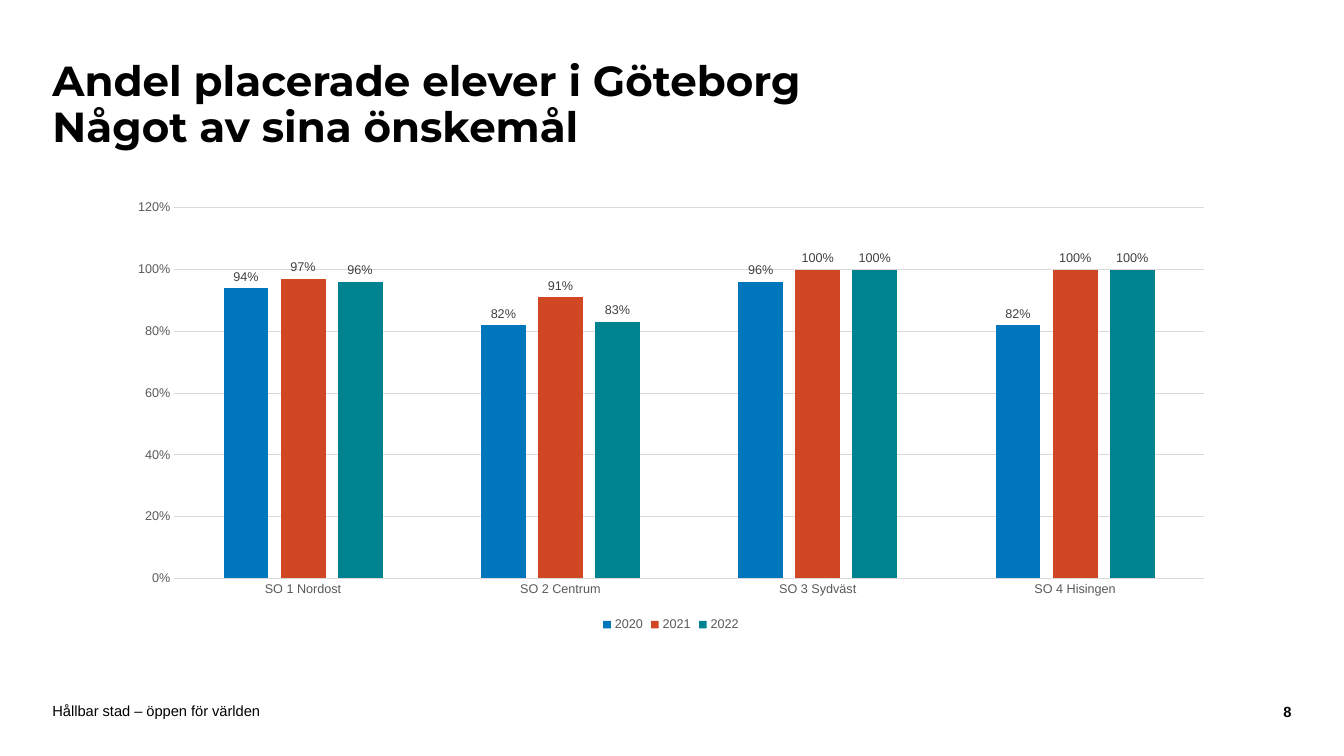
from pptx import Presentation
from pptx.chart.data import CategoryChartData
from pptx.dml.color import RGBColor
from pptx.enum.chart import XL_CHART_TYPE, XL_LABEL_POSITION, XL_LEGEND_POSITION, XL_TICK_MARK
from pptx.enum.text import MSO_ANCHOR, PP_ALIGN
from pptx.util import Inches, Pt

COLORS = {
    "text": "000000",
    "axis": "595959",
    "label": "404040",
    "grid": "D9D9D9",
    "2020": "0077BC",
    "2021": "D24723",
    "2022": "008391",
}


def set_font(font, size, color, name="Arial", bold=False):
    font.name = name
    font.size = Pt(size)
    font.bold = bold
    font.color.rgb = RGBColor.from_string(COLORS[color])


def add_text(text, left, top, width, height, size, name="Arial", bold=False,
             align=PP_ALIGN.LEFT, inset=0, spacing=1.0):
    sp = slide.shapes.add_textbox(Inches(left), Inches(top), Inches(width), Inches(height))
    tf = sp.text_frame
    tf.word_wrap = True
    tf.vertical_anchor = MSO_ANCHOR.MIDDLE
    tf.margin_left = tf.margin_right = 0
    tf.margin_top = tf.margin_bottom = Inches(inset)
    p = tf.paragraphs[0]
    p.text = text
    p.alignment = align
    p.line_spacing = spacing
    for r in p.runs:
        set_font(r.font, size, "text", name, bold)


prs = Presentation()
prs.slide_width, prs.slide_height = Inches(13.33), Inches(7.5)
slide = prs.slides.add_slide(prs.slide_layouts[6])

# Title and footer
add_text("Andel placerade elever i Göteborg\vNågot av sina önskemål", 0.52, 0.42, 10.03, 1.26,
         30, name="Montserrat", bold=True, inset=0.05, spacing=0.9)
add_text("Hållbar stad – öppen för världen", 0.52, 6.97, 9.45, 0.16, 10.5)
add_text("8", 12.17, 6.98, 0.64, 0.16, 10.5, bold=True, align=PP_ALIGN.RIGHT)

# Chart data
data = CategoryChartData(number_format="0%")
data.categories = ["SO 1 Nordost", "SO 2 Centrum", "SO 3 Sydväst", "SO 4 Hisingen"]
data.add_series("2020", [0.94, 0.82, 0.96, 0.82])
data.add_series("2021", [0.97, 0.91, 1, 1])
data.add_series("2022", [0.96, 0.83, 1, 1])
chart = slide.shapes.add_chart(XL_CHART_TYPE.COLUMN_CLUSTERED, Inches(1.15), Inches(1.9),
                               Inches(11.01), Inches(4.41), data).chart
set_font(chart.font, 10, "text")
chart.has_title = False

# Legend
chart.has_legend = True
chart.legend.position = XL_LEGEND_POSITION.BOTTOM
chart.legend.include_in_layout = False
set_font(chart.legend.font, 9, "axis")

# Axes
cat_axis, val_axis = chart.category_axis, chart.value_axis
for axis in (cat_axis, val_axis):
    axis.major_tick_mark = axis.minor_tick_mark = XL_TICK_MARK.NONE
    set_font(axis.tick_labels.font, 9, "axis")
val_axis.minimum_scale, val_axis.maximum_scale, val_axis.major_unit = 0, 1.2, 0.2
val_axis.tick_labels.number_format = "0%"
val_axis.tick_labels.number_format_is_linked = False
val_axis.format.line.fill.background()
val_axis.has_major_gridlines = True
for line in (cat_axis.format.line, val_axis.major_gridlines.format.line):
    line.color.rgb = RGBColor.from_string(COLORS["grid"])
    line.width = Pt(0.75)

# Columns and their labels
plot = chart.plots[0]
plot.gap_width, plot.overlap = 219, -27
plot.vary_by_categories = False
for series in plot.series:
    series.invert_if_negative = False
    series.format.fill.solid()
    series.format.fill.fore_color.rgb = RGBColor.from_string(COLORS[series.name])
    labels = series.data_labels
    labels.show_value = True
    labels.position = XL_LABEL_POSITION.OUTSIDE_END
    labels.number_format = "0%"
    labels.number_format_is_linked = False
    set_font(labels.font, 9, "label")

prs.save("out.pptx")
